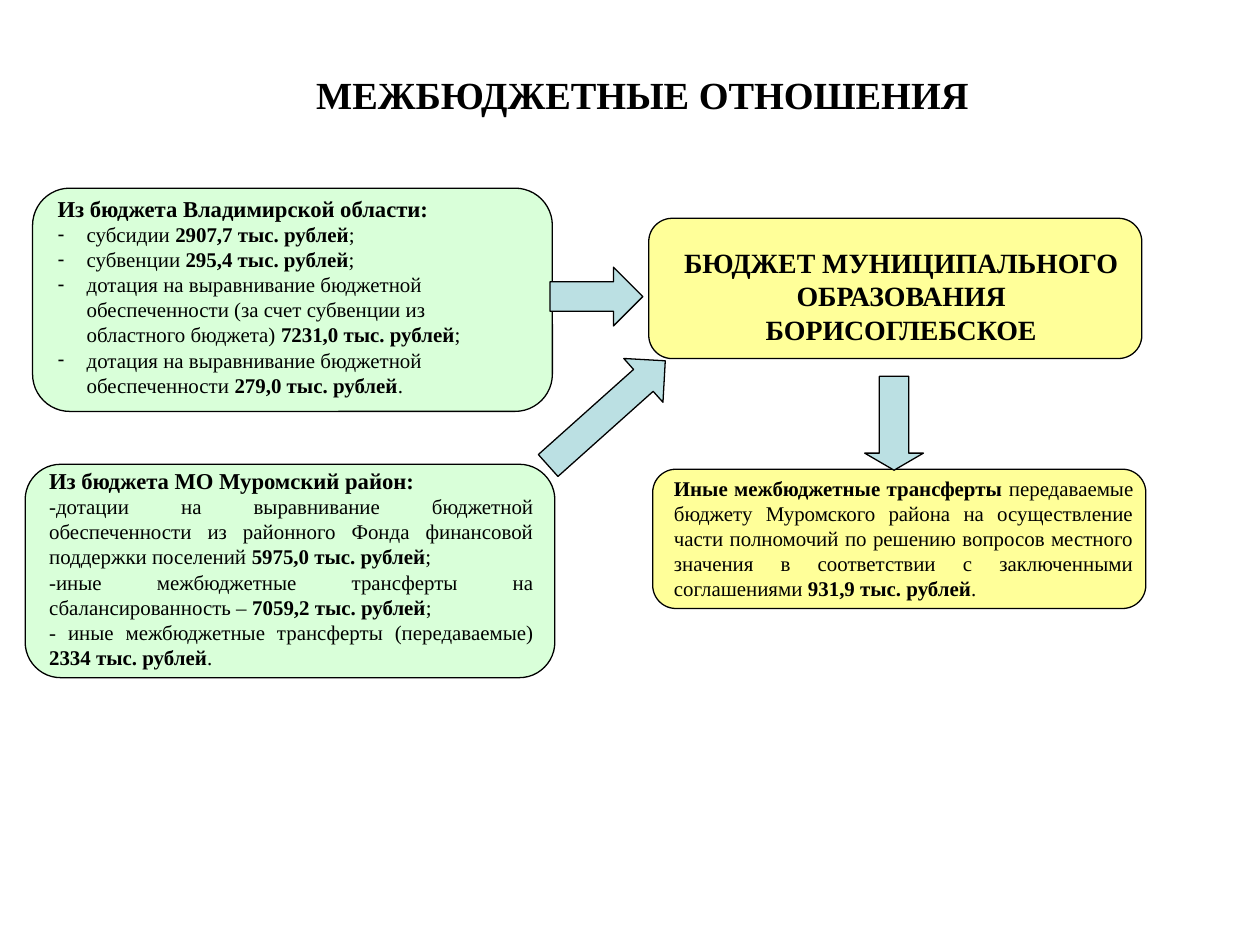
from dataclasses import dataclass
from typing import NamedTuple, Optional

from lxml.etree import SubElement
from pptx import Presentation
from pptx.dml.color import RGBColor
from pptx.enum.shapes import MSO_SHAPE
from pptx.enum.text import MSO_ANCHOR, MSO_AUTO_SIZE, PP_ALIGN
from pptx.oxml.ns import qn
from pptx.util import Cm, Pt


@dataclass(frozen=True)
class Theme:
    font: str = "Times New Roman"
    ink: str = "000000"
    income: str = "CCFFCC"
    budget: str = "FFFF99"
    arrow: str = "BBE0E3"
    income_alpha: int = 74
    line_width: float = 0.75
    title_size: int = 22
    budget_size: int = 16
    heading_size: int = 13
    body_size: int = 12


THEME = Theme()


class Box(NamedTuple):
    left: float
    top: float
    width: float
    height: float

    def lengths(self):
        return [Cm(value) for value in self]


class Run(NamedTuple):
    text: str
    bold: bool = False


class Line(NamedTuple):
    runs: list
    size: int = THEME.body_size
    align: PP_ALIGN = PP_ALIGN.LEFT
    dash: bool = False


class Panel(NamedTuple):
    frame: Box
    text_frame: Box
    lines: list
    fill: str
    alpha: Optional[int] = None
    placeholder: Optional[int] = None


class Arrow(NamedTuple):
    kind: MSO_SHAPE
    box: Box
    head: float = 0.5
    rotation: float = 0


def amount(label: str, value: str, end: str = ";", **style) -> Line:
    """A label followed by a bold sum in thousands of roubles."""
    return Line([Run(label + " "), Run(value + " тыс. рублей", True), Run(end)], **style)


def heading(text: str) -> Line:
    return Line([Run(text, True)], THEME.heading_size)


DASHED = {"dash": True}
JUSTIFIED = {"align": PP_ALIGN.JUSTIFY}

TITLE_BOX = Box(1.52, 1.32, 22.96, 1.17)
TITLE = Line([Run("МЕЖБЮДЖЕТНЫЕ ОТНОШЕНИЯ", True)], THEME.title_size, PP_ALIGN.CENTER)

PANELS = [
    Panel(Box(0.66, 3.81, 10.52, 4.52), Box(0.91, 3.81, 10.01, 4.39), [
        heading("Из бюджета Владимирской области:"),
        amount("субсидии", "2907,7", **DASHED),
        amount("субвенции", "295,4", **DASHED),
        amount("дотация на выравнивание бюджетной обеспеченности "
               "(за счет субвенции из областного бюджета)", "7231,0", **DASHED),
        amount("дотация на выравнивание бюджетной обеспеченности", "279,0", ".", **DASHED),
    ], THEME.income, THEME.income_alpha, placeholder=1),
    Panel(Box(0.51, 9.4, 10.72, 4.32), Box(0.74, 9.32, 10.32, 4.39), [
        heading("Из бюджета МО Муромский район:"),
        amount("-дотации на выравнивание бюджетной обеспеченности "
               "из районного Фонда финансовой поддержки поселений", "5975,0", **JUSTIFIED),
        amount("-иные межбюджетные трансферты на сбалансированность –", "7059,2", **JUSTIFIED),
        amount("- иные межбюджетные трансферты (передаваемые)", "2334", ".", **JUSTIFIED),
    ], THEME.income, THEME.income_alpha, placeholder=2),
    Panel(Box(13.13, 4.42, 9.98, 2.84), Box(13.34, 4.85, 9.8, 2.31), [
        Line([Run("БЮДЖЕТ МУНИЦИПАЛЬНОГО ОБРАЗОВАНИЯ БОРИСОГЛЕБСКОЕ", True)],
             THEME.budget_size, PP_ALIGN.CENTER),
    ], THEME.budget),
    Panel(Box(13.21, 9.5, 9.98, 2.82), Box(13.39, 9.5, 9.8, 2.82), [
        Line([
            Run("Иные межбюджетные трансферты ", True),
            Run("передаваемые бюджету Муромского района на осуществление части полномочий "
                "по решению вопросов местного значения в соответствии с заключенными "
                "соглашениями "),
            Run("931,9 тыс. рублей", True),
            Run("."),
        ], **JUSTIFIED),
    ], THEME.budget),
]

ARROWS = [
    Arrow(MSO_SHAPE.RIGHT_ARROW, Box(10.69, 7.77, 3.18, 1.19), rotation=318.2),
    Arrow(MSO_SHAPE.DOWN_ARROW, Box(17.5, 7.62, 1.19, 1.9), head=0.29),
    Arrow(MSO_SHAPE.RIGHT_ARROW, Box(11.13, 5.41, 1.88, 1.19)),
]


def place(shape, box: Box) -> None:
    shape.left, shape.top, shape.width, shape.height = box.lengths()


def set_bullet(paragraph, dash: bool) -> None:
    """Give the paragraph a hanging dash, or clear an inherited bullet."""
    properties = paragraph._p.get_or_add_pPr()
    indent = Cm(0.59) if dash else 0
    properties.set("marL", str(indent))
    properties.set("indent", str(-indent))
    if dash:
        SubElement(properties, qn("a:buChar")).set("char", "-")
    else:
        SubElement(properties, qn("a:buNone"))


def write_lines(shape, lines: list, anchor: MSO_ANCHOR = MSO_ANCHOR.TOP) -> None:
    frame = shape.text_frame
    frame.word_wrap = True
    frame.auto_size = MSO_AUTO_SIZE.NONE
    frame.vertical_anchor = anchor
    for index, line in enumerate(lines):
        paragraph = frame.add_paragraph() if index else frame.paragraphs[0]
        set_bullet(paragraph, line.dash)
        paragraph.alignment = line.align
        paragraph.space_before = Pt(0)
        for part in line.runs:
            run = paragraph.add_run()
            run.text = part.text
            run.font.name = THEME.font
            run.font.size = Pt(line.size)
            run.font.bold = part.bold
            run.font.color.rgb = RGBColor.from_string(THEME.ink)


def add_outlined(slide, kind: MSO_SHAPE, box: Box, fill: str, alpha: Optional[int] = None):
    shape = slide.shapes.add_shape(kind, *box.lengths())
    shape.shadow.inherit = False
    shape.fill.solid()
    shape.fill.fore_color.rgb = RGBColor.from_string(fill)
    if alpha is not None:
        color = shape.element.spPr.find(qn("a:solidFill")).find(qn("a:srgbClr"))
        SubElement(color, qn("a:alpha")).set("val", str(alpha * 1000))
    shape.line.color.rgb = RGBColor.from_string(THEME.ink)
    shape.line.width = Pt(THEME.line_width)
    return shape


def add_panel(slide, panel: Panel) -> None:
    background = add_outlined(slide, MSO_SHAPE.FLOWCHART_ALTERNATE_PROCESS,
                              panel.frame, panel.fill, panel.alpha)
    if panel.placeholder is None:
        text = slide.shapes.add_textbox(*panel.text_frame.lengths())
    else:
        text = slide.placeholders[panel.placeholder]
        place(text, panel.text_frame)
        text.element.addprevious(background.element)
    write_lines(text, panel.lines)


def add_arrow(slide, arrow: Arrow) -> None:
    shape = add_outlined(slide, arrow.kind, arrow.box, THEME.arrow)
    shape.adjustments[0] = 0.5
    shape.adjustments[1] = arrow.head
    shape.rotation = arrow.rotation


def main() -> None:
    presentation = Presentation()
    presentation.slide_width, presentation.slide_height = Cm(25.5), Cm(19.05)
    two_content = presentation.slide_layouts[3]
    slide = presentation.slides.add_slide(two_content)
    place(slide.shapes.title, TITLE_BOX)
    write_lines(slide.shapes.title, [TITLE], MSO_ANCHOR.MIDDLE)
    for panel in PANELS:
        add_panel(slide, panel)
    for arrow in ARROWS:
        add_arrow(slide, arrow)
    presentation.save("out.pptx")


if __name__ == "__main__":
    main()
